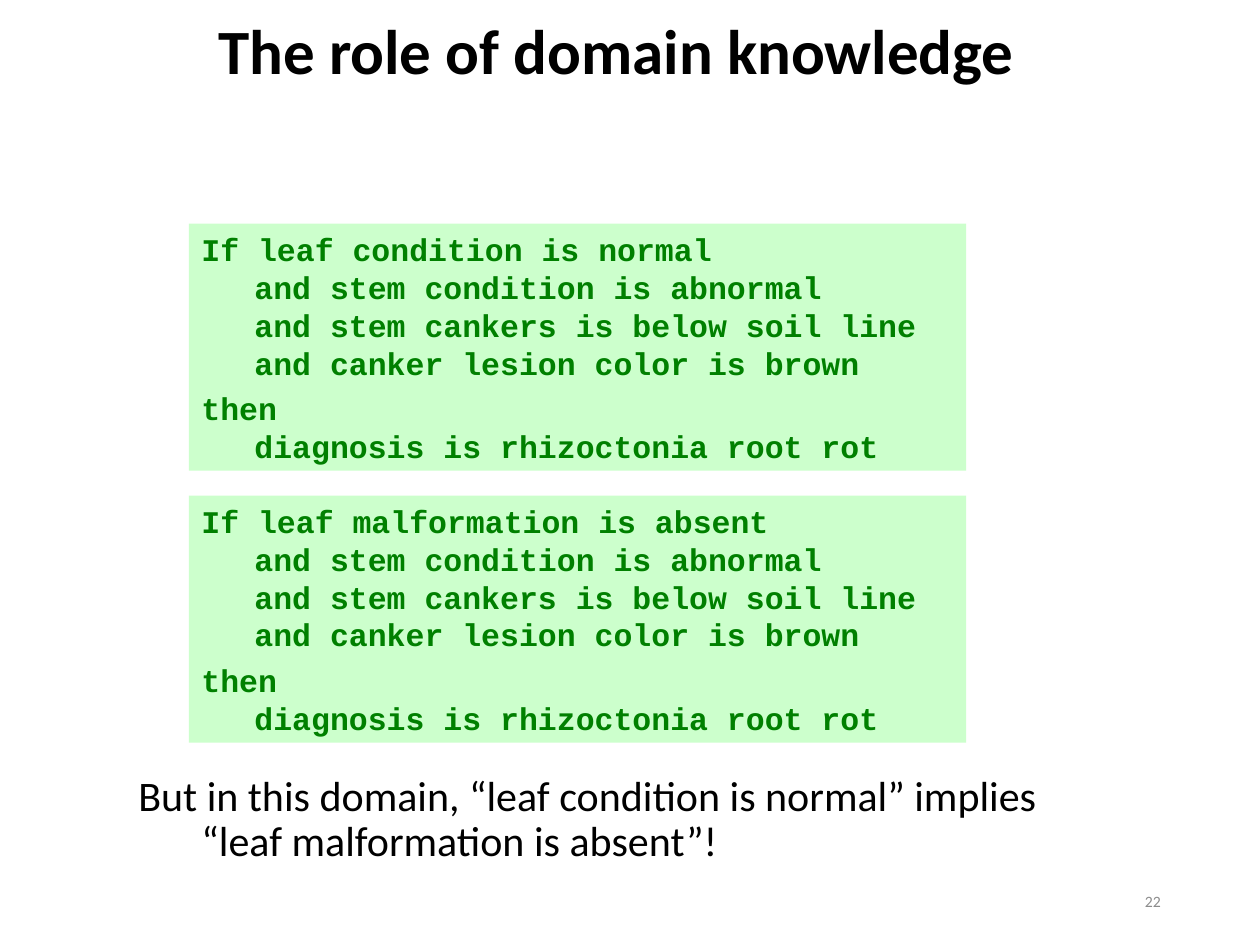
from dataclasses import dataclass

from pptx import Presentation
from pptx.dml.color import RGBColor
from pptx.enum.shapes import MSO_SHAPE
from pptx.enum.text import MSO_ANCHOR, PP_ALIGN
from pptx.util import Cm, Pt

RECTANGLE = MSO_SHAPE.RECTANGLE
TOP, MIDDLE = MSO_ANCHOR.TOP, MSO_ANCHOR.MIDDLE
LEFT, RIGHT = PP_ALIGN.LEFT, PP_ALIGN.RIGHT


@dataclass(frozen=True)
class Theme:
    text_font: str = "Calibri"
    rule_font: str = "Courier New"
    black: RGBColor = RGBColor(0, 0, 0)
    gray: RGBColor = RGBColor(0x8C, 0x8C, 0x8C)
    green: RGBColor = RGBColor(0, 0x80, 0)
    pale_green: RGBColor = RGBColor(0xCC, 0xFF, 0xCC)
    title_size: Pt = Pt(36)
    body_size: Pt = Pt(24)
    rule_size: Pt = Pt(18)
    number_size: Pt = Pt(9)


theme = Theme()


def prepare_frame(shape, anchor):
    frame = shape.text_frame
    frame.word_wrap = True
    frame.vertical_anchor = anchor
    frame.margin_left = frame.margin_right = Cm(0.25)
    frame.margin_top = frame.margin_bottom = Cm(0.13)
    return frame


def write_lines(paragraph, lines, font, size, color, bold=False, hanging=0, spacing=1.0, align=LEFT):
    """Write lines joined by line breaks; all but the first are indented by hanging cm."""
    paragraph.alignment = align
    paragraph.line_spacing = spacing
    if hanging:
        properties = paragraph._p.get_or_add_pPr()
        properties.set("marL", str(Cm(hanging)))
        properties.set("indent", str(-Cm(hanging)))
    for index, line in enumerate(lines):
        if index:
            paragraph.add_line_break()
        run = paragraph.add_run()
        run.text = line
        run.font.name = font
        run.font.size = size
        run.font.bold = bold
        run.font.color.rgb = color


presentation = Presentation()
presentation.slide_width = Cm(25.4)
presentation.slide_height = Cm(19.05)
slide = presentation.slides.add_slide(presentation.slide_layouts[6])

# Title
title = slide.shapes.add_textbox(Cm(4.15), Cm(-0.5), Cm(21.25), Cm(3.18))
frame = prepare_frame(title, MIDDLE)
write_lines(frame.paragraphs[0], ["The role of domain knowledge"],
            theme.text_font, theme.title_size, theme.black, bold=True, spacing=0.9)

# Two rules that differ only in their first condition
first_conditions = ["If leaf condition is normal", "If leaf malformation is absent"]
shared_conditions = [
    "and stem condition is abnormal",
    "and stem cankers is below soil line",
    "and canker lesion color is brown",
]
conclusion = ["then", "diagnosis is rhizoctonia root rot"]

for index, first_condition in enumerate(first_conditions):
    rule = slide.shapes.add_shape(RECTANGLE, Cm(3.81), Cm(4.51 + 5.48 * index), Cm(15.67), Cm(4.98))
    rule.shadow.inherit = False
    rule.fill.solid()
    rule.fill.fore_color.rgb = theme.pale_green
    rule.line.fill.background()
    frame = prepare_frame(rule, TOP)
    write_lines(frame.paragraphs[0], [first_condition, *shared_conditions], theme.rule_font,
                theme.rule_size, theme.green, bold=True, hanging=1.07)
    then_paragraph = frame.add_paragraph()
    then_paragraph.space_before = Pt(4.5)
    write_lines(then_paragraph, conclusion, theme.rule_font,
                theme.rule_size, theme.green, bold=True, hanging=1.07)

# Remark below the rules
remark = slide.shapes.add_textbox(Cm(2.54), Cm(15.49), Cm(22.86), Cm(2.2))
frame = prepare_frame(remark, TOP)
write_lines(frame.paragraphs[0],
            ["But in this domain, “leaf condition is normal” implies", "“leaf malformation is absent”!"],
            theme.text_font, theme.body_size, theme.black, hanging=1.27, spacing=0.9)

# Slide number
number = slide.shapes.add_textbox(Cm(17.93), Cm(17.65), Cm(5.72), Cm(1.02))
frame = prepare_frame(number, MIDDLE)
write_lines(frame.paragraphs[0], ["22"], theme.text_font, theme.number_size, theme.gray, align=RIGHT)

presentation.save("out.pptx")
